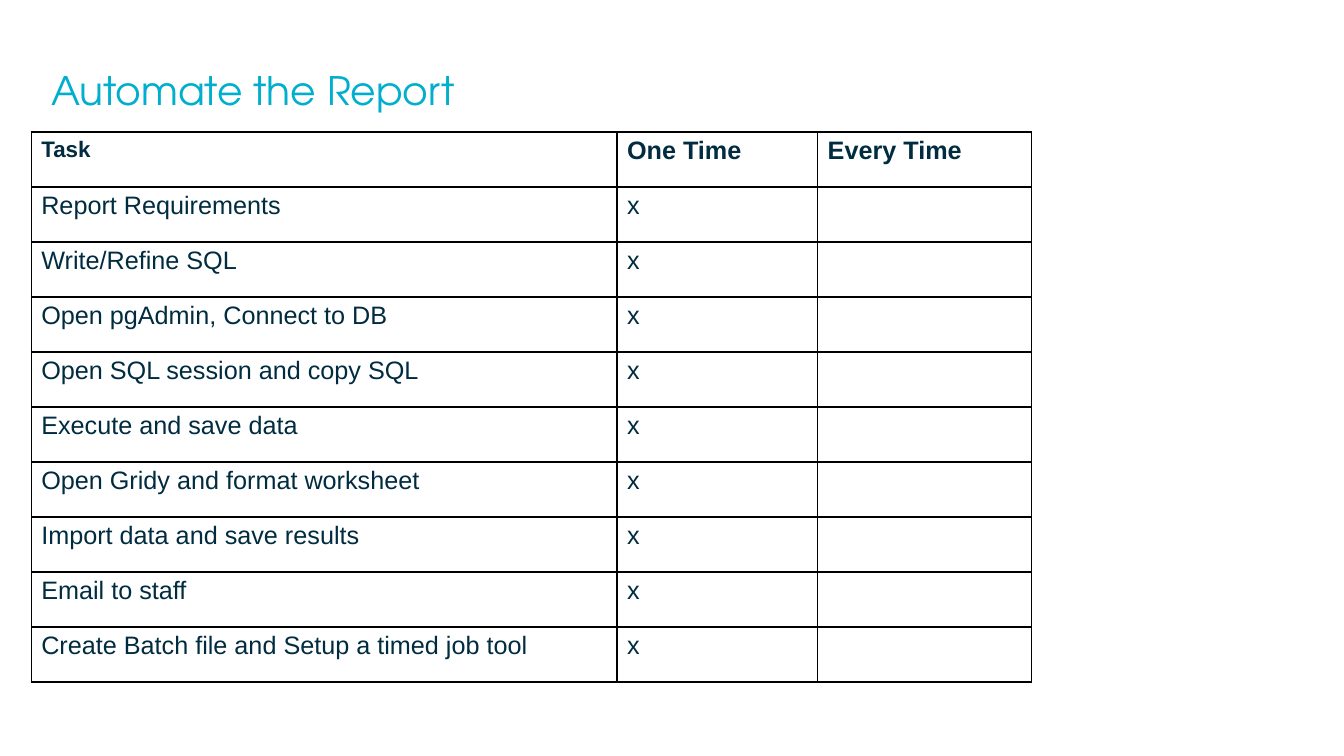
from pptx import Presentation
from pptx import util as u
from pptx.dml.color import RGBColor
from pptx.enum import text
from pptx.oxml import parse_xml
from pptx.oxml.ns import nsdecls

THEME = {
    "title": {"font": "TeX Gyre Adventor", "size": 28, "color": "00AECD"},
    "body": {"font": "Arial", "size": 18, "color": "012C40"},
    "task": 16,
    "line": "000000",
    "thin": 1,
    "thick": 1.5,
}
HEADS = ["Task", "One Time", "Every Time"]
TASKS = [
    "Report Requirements",
    "Write/Refine SQL",
    "Open pgAdmin, Connect to DB",
    "Open SQL session and copy SQL",
    "Execute and save data",
    "Open Gridy and format worksheet",
    "Import data and save results",
    "Email to staff",
    "Create Batch file and Setup a timed job tool",
]
WIDTHS = [5.81, 1.99, 2.12]
HEIGHT = 5.46


def style(para, look):
    para.font.name = look["font"]
    para.font.size = u.Pt(look["size"])
    para.font.color.rgb = RGBColor.from_string(look["color"])


def border(cell, side, width):
    """Draw one side (L, R, T or B) of a cell, width in points."""
    cell._tc.get_or_add_tcPr().append(parse_xml(
        f'<a:ln{side} {nsdecls("a")} w="{u.Pt(width)}"><a:solidFill>'
        f'<a:srgbClr val="{THEME["line"]}"/></a:solidFill></a:ln{side}>'))


deck = Presentation()
deck.slide_width, deck.slide_height = u.Inches(13.33), u.Inches(7.5)
slide = deck.slides.add_slide(deck.slide_layouts[5])

title = slide.shapes.title
title.left, title.top = u.Inches(0.41), u.Inches(0.55)
title.width, title.height = u.Inches(11.5), u.Inches(0.74)
title.text_frame.text = "Automate the Report"
title.text_frame.vertical_anchor = text.MSO_ANCHOR.MIDDLE
head = title.text_frame.paragraphs[0]
head.alignment = text.PP_ALIGN.LEFT
head.line_spacing = 0.9
style(head, THEME["title"])

rows = [HEADS] + [[task, "x", ""] for task in TASKS]
table = slide.shapes.add_table(
    len(rows), len(HEADS), u.Inches(0.31), u.Inches(1.31),
    u.Inches(sum(WIDTHS)), u.Inches(HEIGHT)).table
table.first_row = table.horz_banding = False
for col, width in zip(table.columns, WIDTHS):
    col.width = u.Inches(width)

for r, row in enumerate(rows):
    for c, words in enumerate(row):
        cell = table.cell(r, c)
        cell.text = words
        para = cell.text_frame.paragraphs[0]
        style(para, THEME["body"])
        para.font.bold = r == 0
        for side in "LR":
            border(cell, side, THEME["thin"])
        border(cell, "T", THEME["thick" if r < 3 else "thin"])
        border(cell, "B", THEME["thick" if r < 2 else "thin"])
        cell.fill.background()
table.cell(0, 0).text_frame.paragraphs[0].font.size = u.Pt(THEME["task"])

deck.save("out.pptx")
